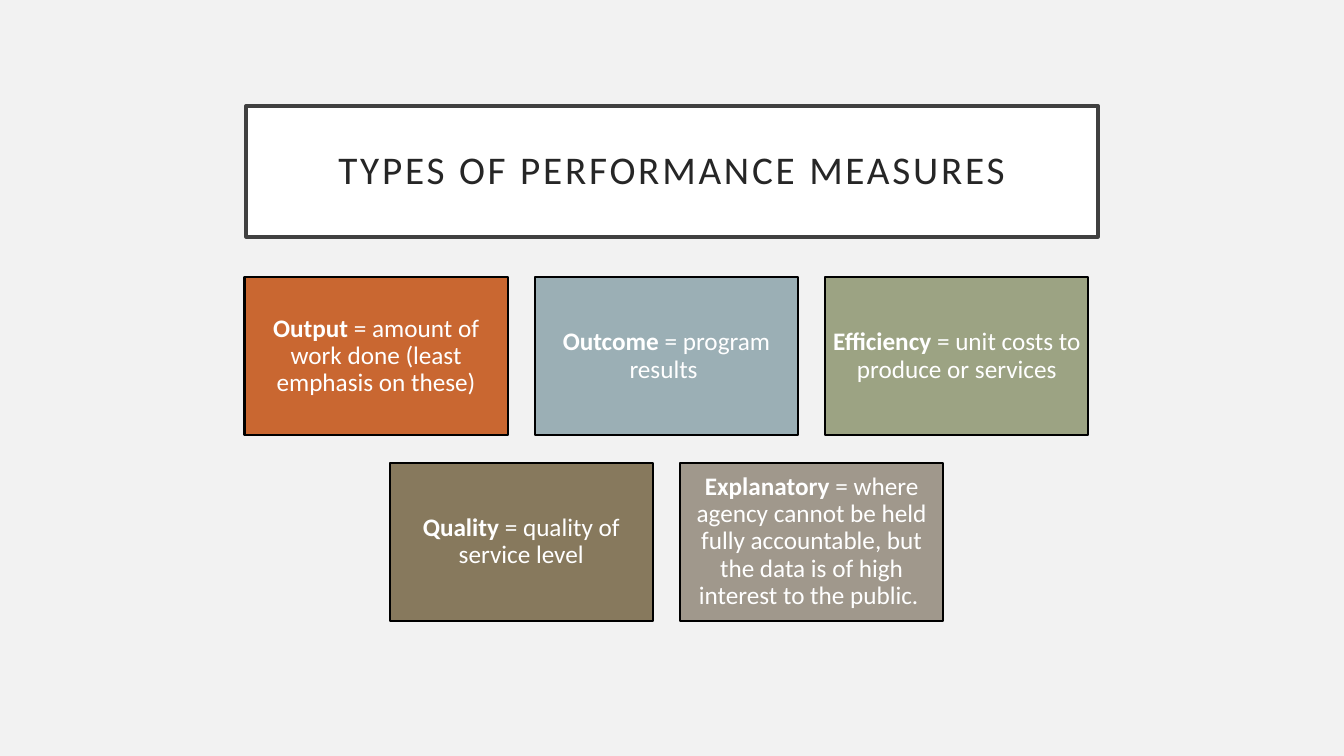
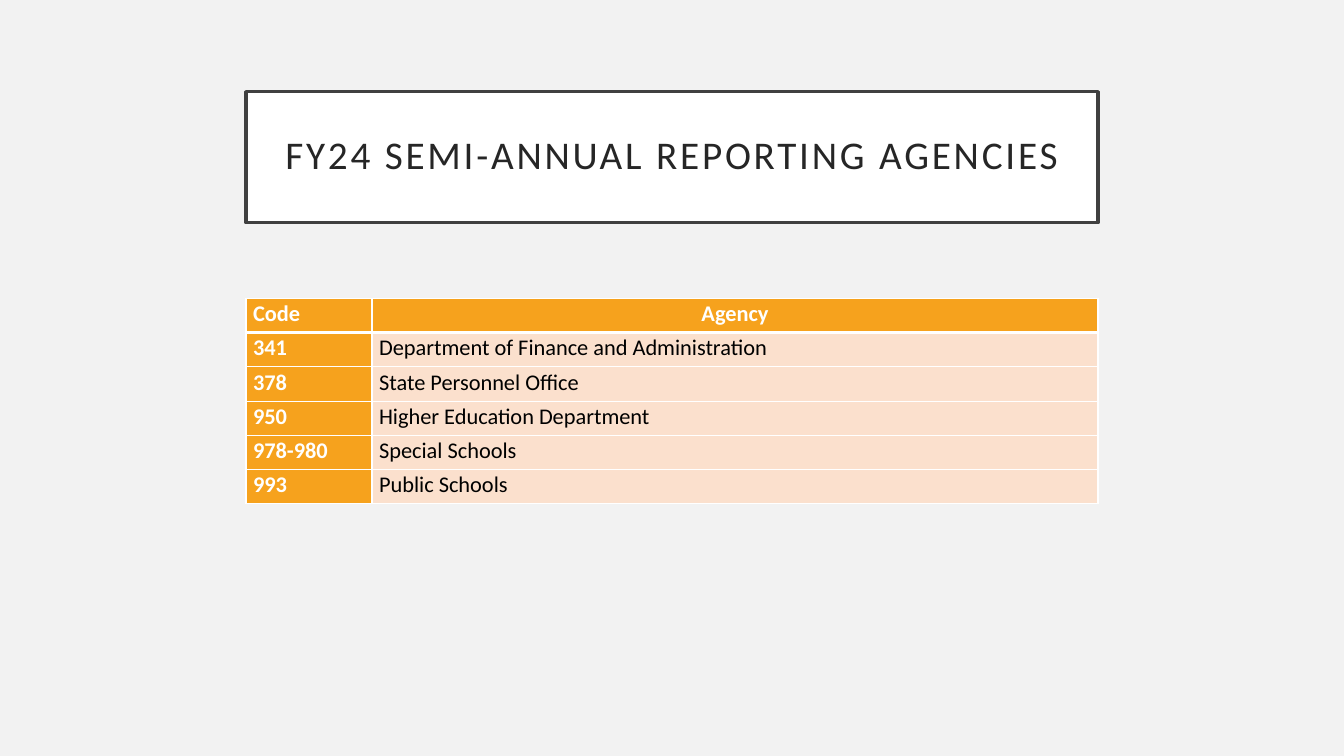
import dataclasses

import pptx
import pptx.dml.color
import pptx.enum.shapes
import pptx.enum.text
import pptx.oxml
import pptx.oxml.ns
import pptx.presentation
import pptx.slide
import pptx.table
import pptx.text.text
import pptx.util

Inches = pptx.util.Inches
Pt = pptx.util.Pt
ALIGN = pptx.enum.text.PP_ALIGN
ANCHOR = pptx.enum.text.MSO_ANCHOR

FONT = "Calibri"
COLORS = {
    "background": "F2F2F2",
    "white": "FFFFFF",
    "black": "000000",
    "title_text": "262626",
    "title_line": "404040",
    "output": "C96731",
    "outcome": "9BAFB5",
    "efficiency": "9CA383",
    "quality": "87795D",
    "explanatory": "A0988C",
    "table_accent": "F6A21D",
    "table_body": "FBE0CD",
}

CONTENT_LEFT, CONTENT_WIDTH = 2.44, 8.45
TITLE_HEIGHT = 1.3

CARD_WIDTH, CARD_HEIGHT, CARD_GAP = 2.61, 1.57, 0.27
CARDS_CENTER, CARDS_TOP = 6.61, 2.75

TABLE_TOP, ROW_HEIGHT = 2.96, 0.34
COLUMN_WIDTHS = (1.25, 7.2)


@dataclasses.dataclass(frozen=True)
class Measure:
    term: str
    meaning: str
    color: str


@dataclasses.dataclass(frozen=True)
class Agency:
    code: str
    name: str


MEASURE_ROWS = (
    (
        Measure("Output", " = amount of work done (least emphasis on these)", "output"),
        Measure("Outcome", " = program results ", "outcome"),
        Measure("Efficiency", " = unit costs to produce or services", "efficiency"),
    ),
    (
        Measure("Quality", " = quality of service level", "quality"),
        Measure(
            "Explanatory",
            " = where agency cannot be held fully accountable, "
            "but the data is of high interest to the public. ",
            "explanatory",
        ),
    ),
)

AGENCIES = (
    Agency("341", "Department of Finance and Administration"),
    Agency("378", "State Personnel Office"),
    Agency("950", "Higher Education Department"),
    Agency("978-980", "Special Schools"),
    Agency("993", "Public Schools"),
)


def rgb(name: str) -> pptx.dml.color.RGBColor:
    return pptx.dml.color.RGBColor.from_string(COLORS[name])


def add_span(
    para: pptx.text.text._Paragraph,
    text: str,
    *,
    size: float,
    color: str = "white",
    bold: bool = False,
    tracking: float = 0,
) -> None:
    """Append a formatted run; tracking is the letter spacing in points."""
    span = para.add_run()
    span.text = text
    span.font.name = FONT
    span.font.size = Pt(size)
    span.font.bold = bold
    span.font.color.rgb = rgb(color)
    if tracking:
        span.font._element.set("spc", str(round(tracking * 100)))


def format_box(box, *, fill: str, line: str, line_width: float, inset: float):
    """Style a framed box and return its first paragraph, centred."""
    box.fill.solid()
    box.fill.fore_color.rgb = rgb(fill)
    box.line.color.rgb = rgb(line)
    box.line.width = Pt(line_width)
    frame = box.text_frame
    frame.word_wrap = True
    frame.auto_size = pptx.enum.text.MSO_AUTO_SIZE.NONE
    frame.vertical_anchor = ANCHOR.MIDDLE
    frame.margin_left = frame.margin_right = Inches(inset)
    frame.margin_top = frame.margin_bottom = Inches(inset)
    para = frame.paragraphs[0]
    para.alignment = ALIGN.CENTER
    para.line_spacing = 0.9
    return para


def add_page(
    deck: pptx.presentation.Presentation, title: str, title_top: float
) -> pptx.slide.Slide:
    page = deck.slides.add_slide(deck.slide_layouts.get_by_name("Title Only"))
    box = page.shapes.title
    box.left, box.top = Inches(CONTENT_LEFT), Inches(title_top)
    box.width, box.height = Inches(CONTENT_WIDTH), Inches(TITLE_HEIGHT)
    para = format_box(box, fill="white", line="title_line", line_width=2.5, inset=0.2)
    add_span(para, title, size=28, color="title_text", tracking=2)
    return page


def add_card(page: pptx.slide.Slide, measure: Measure, left: float, top: float) -> None:
    card = page.shapes.add_shape(
        pptx.enum.shapes.MSO_SHAPE.RECTANGLE,
        Inches(left),
        Inches(top),
        Inches(CARD_WIDTH),
        Inches(CARD_HEIGHT),
    )
    card.shadow.inherit = False
    para = format_box(
        card, fill=measure.color, line="black", line_width=1.5, inset=0.07
    )
    add_span(para, measure.term, size=18, bold=True)
    add_span(para, measure.meaning, size=18)


def set_borders(cell: pptx.table._Cell, widths: dict[str, float]) -> None:
    """Draw white borders; widths maps each side (L, R, T, B) to points."""
    properties = cell._tc.get_or_add_tcPr()
    for position, (side, width) in enumerate(widths.items()):
        border = pptx.oxml.parse_xml(
            f'<a:ln{side} {pptx.oxml.ns.nsdecls("a")} w="{Pt(width)}">'
            f'<a:solidFill><a:srgbClr val="{COLORS["white"]}"/></a:solidFill>'
            f"</a:ln{side}>"
        )
        properties.insert(position, border)


def fill_cell(
    cell: pptx.table._Cell, text: str, *, row: int, accent: bool, centered: bool
) -> None:
    cell.fill.solid()
    cell.fill.fore_color.rgb = rgb("table_accent" if accent else "table_body")
    cell.margin_left = cell.margin_right = Inches(0.07)
    cell.margin_top = cell.margin_bottom = 0
    para = cell.text_frame.paragraphs[0]
    para.alignment = ALIGN.CENTER if centered else ALIGN.LEFT
    para.line_spacing = 1.07
    add_span(para, text, size=16, color="white" if accent else "black", bold=accent)
    top, bottom = (3 if row == 1 else 1), (3 if row == 0 else 1)
    set_borders(cell, {"L": 1, "R": 1, "T": top, "B": bottom})


def add_agency_table(page: pptx.slide.Slide) -> None:
    rows = [("Code", "Agency")] + [(agency.code, agency.name) for agency in AGENCIES]
    table = page.shapes.add_table(
        len(rows),
        len(COLUMN_WIDTHS),
        Inches(CONTENT_LEFT),
        Inches(TABLE_TOP),
        Inches(CONTENT_WIDTH),
        Inches(ROW_HEIGHT * len(rows)),
    ).table
    table.first_col = True
    table.horz_banding = False
    for column, width in zip(table.columns, COLUMN_WIDTHS):
        column.width = Inches(width)
    for row, texts in enumerate(rows):
        table.rows[row].height = Inches(ROW_HEIGHT)
        for column, text in enumerate(texts):
            fill_cell(
                table.cell(row, column),
                text,
                row=row,
                accent=row == 0 or column == 0,
                centered=row == 0 and column == 1,
            )


def build_measures(deck: pptx.presentation.Presentation) -> None:
    page = add_page(deck, "TYPES OF PERFORMANCE MEASURES", 1.05)
    for row, measures in enumerate(MEASURE_ROWS):
        row_width = len(measures) * (CARD_WIDTH + CARD_GAP) - CARD_GAP
        left = CARDS_CENTER - row_width / 2
        top = CARDS_TOP + row * (CARD_HEIGHT + CARD_GAP)
        for column, measure in enumerate(measures):
            add_card(page, measure, left + column * (CARD_WIDTH + CARD_GAP), top)


def build_agencies(deck: pptx.presentation.Presentation) -> None:
    page = add_page(deck, "FY24 SEMI-ANNUAL REPORTING AGENCIES", 0.91)
    add_agency_table(page)


def main() -> None:
    deck = pptx.Presentation()
    deck.slide_width, deck.slide_height = Inches(13.33), Inches(7.5)
    background = deck.slide_master.background.fill
    background.solid()
    background.fore_color.rgb = rgb("background")
    build_measures(deck)
    build_agencies(deck)
    deck.save("out.pptx")


if __name__ == "__main__":
    main()
